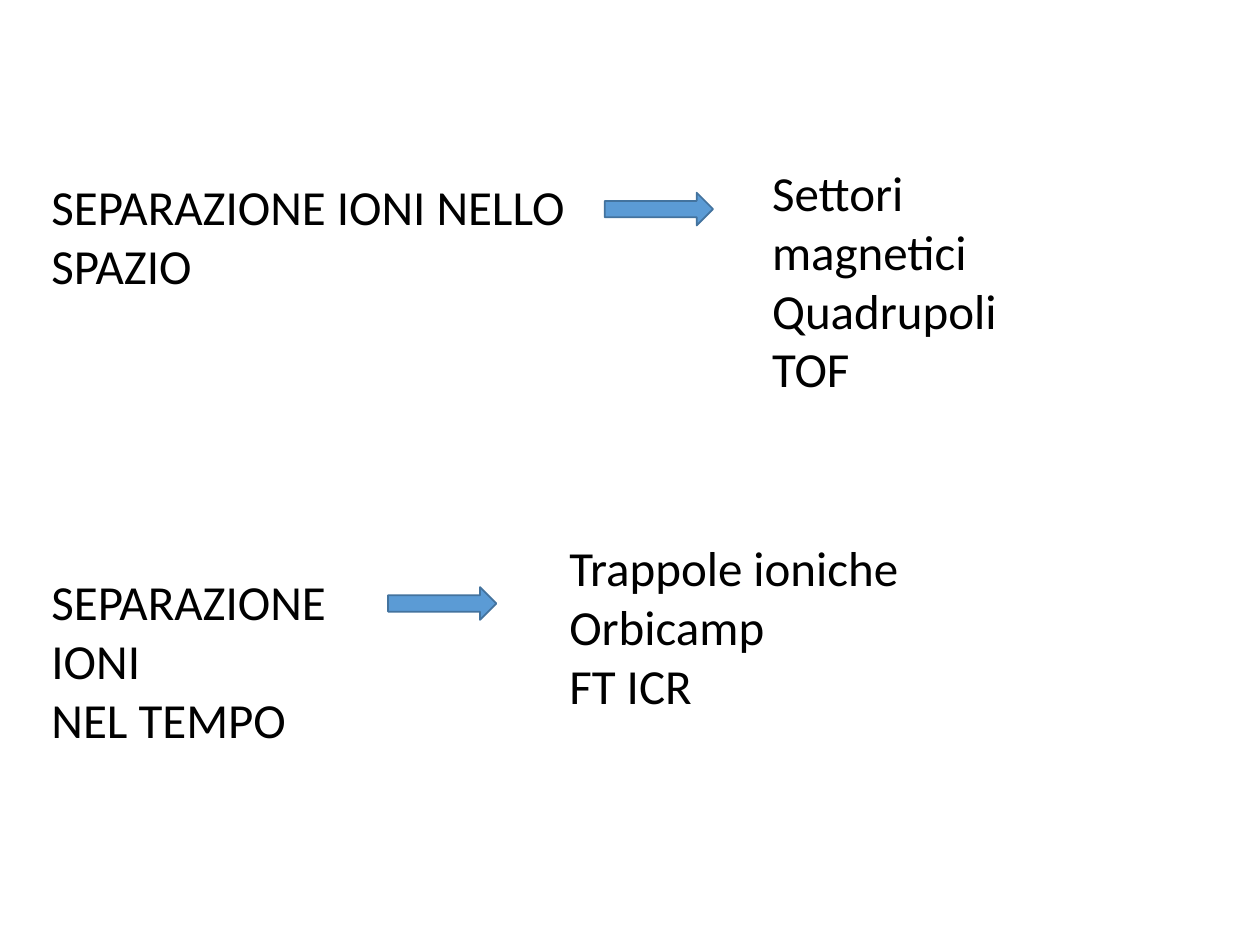
from dataclasses import dataclass

from pptx import Presentation
from pptx.dml.color import RGBColor as RGB
from pptx.enum.shapes import MSO_SHAPE as Shape
from pptx.enum.text import MSO_AUTO_SIZE as AutoSize
from pptx.slide import Slide
from pptx.util import Inches, Pt

COLS, ROWS = 100, 75
WIDTH, HEIGHT = Inches(10), Inches(7.5)
ARROW_SIZE = (8.6, 2.6)


@dataclass(frozen=True)
class Theme:
    font: str = "Calibri"
    size: Pt = Pt(28)
    text: RGB = RGB(0, 0, 0)
    arrow: RGB = RGB(0x5B, 0x9B, 0xD5)
    outline: RGB = RGB(0x43, 0x73, 0x9E)
    outline_width: Pt = Pt(1)


@dataclass(frozen=True)
class Label:
    col: float
    row: float
    cols: float
    rows: float
    lines: tuple[str, ...]


@dataclass(frozen=True)
class Separation:
    """A way of separating ions, and the analysers that use it."""
    method: Label
    arrow: tuple[float, float]
    analysers: Label


THEME = Theme()
SEPARATIONS = (
    Separation(
        Label(3.1, 13.5, 43.1, 10.4, ("SEPARAZIONE IONI NELLO SPAZIO",)),
        (48, 15.3),
        Label(60.3, 12.4, 28.6, 19.9, ("Settori magnetici", "Quadrupoli", "TOF")),
    ),
    Separation(
        Label(3.1, 44.9, 43.1, 15.1, ("SEPARAZIONE", "IONI \vNEL TEMPO")),
        (30.8, 46.6),
        Label(44.2, 42.2, 43.1, 15.1, ("Trappole ioniche", "Orbicamp", "FT ICR")),
    ),
)


def cells(col: float, row: float, cols: float, rows: float) -> tuple[int, ...]:
    """Turn grid units into left, top, width and height."""
    return (int(WIDTH * col / COLS), int(HEIGHT * row / ROWS),
            int(WIDTH * cols / COLS), int(HEIGHT * rows / ROWS))


def draw_label(s: Slide, label: Label) -> None:
    box = cells(label.col, label.row, label.cols, label.rows)
    tf = s.shapes.add_textbox(*box).text_frame
    tf.word_wrap = True
    tf.auto_size = AutoSize.SHAPE_TO_FIT_TEXT
    tf.text = "\n".join(label.lines)
    for p in tf.paragraphs:
        for r in p.runs:
            r.font.name = THEME.font
            r.font.size = THEME.size
            r.font.color.rgb = THEME.text


def draw_arrow(s: Slide, col: float, row: float) -> None:
    sp = s.shapes.add_shape(Shape.RIGHT_ARROW, *cells(col, row, *ARROW_SIZE))
    sp.shadow.inherit = False
    sp.fill.solid()
    sp.fill.fore_color.rgb = THEME.arrow
    sp.line.color.rgb = THEME.outline
    sp.line.width = THEME.outline_width


def main() -> None:
    prs = Presentation()
    prs.slide_width, prs.slide_height = WIDTH, HEIGHT
    s = prs.slides.add_slide(prs.slide_layouts[6])
    for separation in SEPARATIONS:
        draw_label(s, separation.method)
        draw_arrow(s, *separation.arrow)
        draw_label(s, separation.analysers)
    prs.save("out.pptx")


if __name__ == "__main__":
    main()
